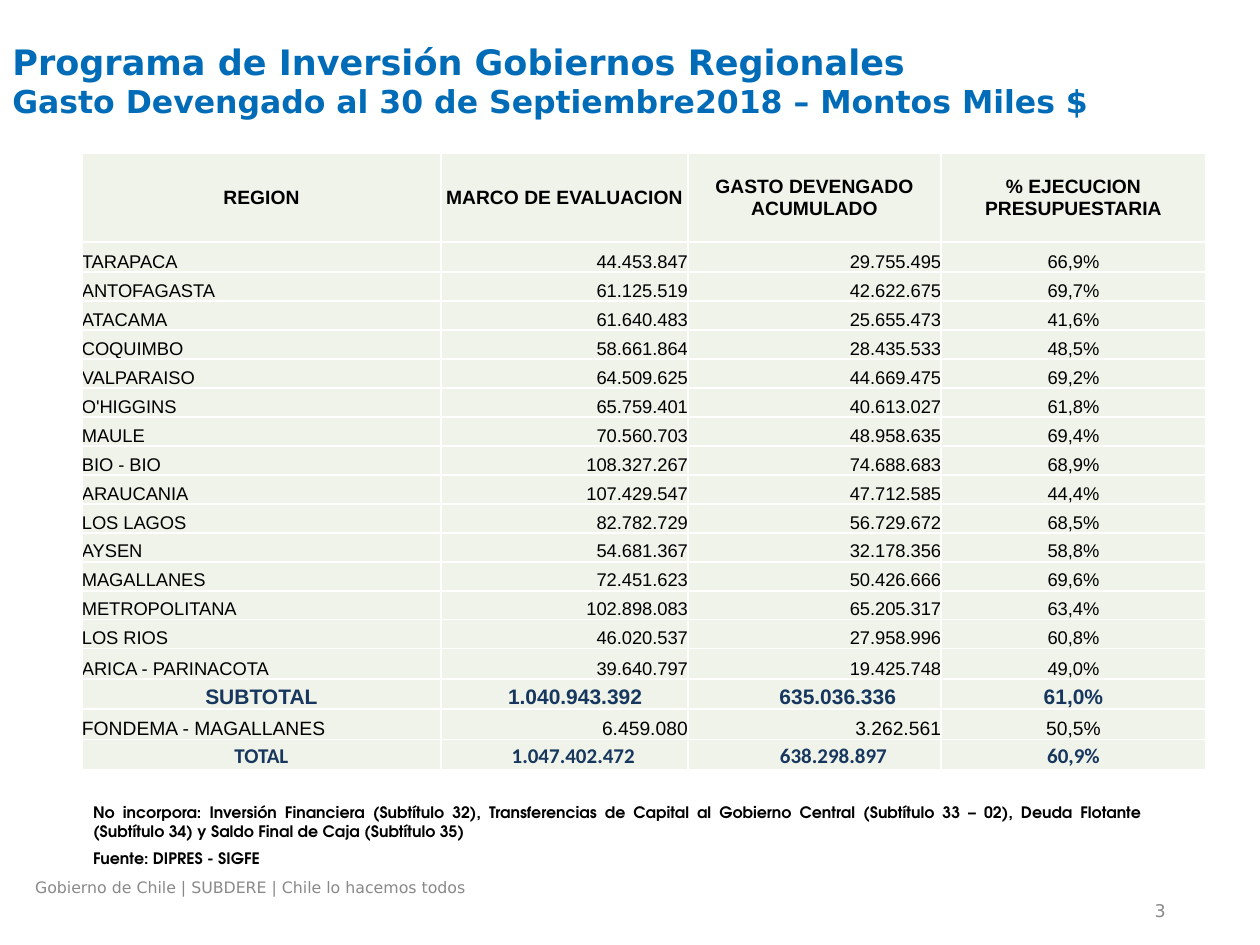
from dataclasses import dataclass

from lxml import etree
from pptx import Presentation
from pptx.dml.color import RGBColor
from pptx.enum.text import MSO_ANCHOR, PP_ALIGN
from pptx.oxml.ns import qn
from pptx.util import Emu, Inches, Pt

LEFT, CENTER, RIGHT, JUSTIFY = PP_ALIGN.LEFT, PP_ALIGN.CENTER, PP_ALIGN.RIGHT, PP_ALIGN.JUSTIFY
TOP, MIDDLE, BOTTOM = MSO_ANCHOR.TOP, MSO_ANCHOR.MIDDLE, MSO_ANCHOR.BOTTOM
SLIDE_WIDTH, SLIDE_HEIGHT = Inches(10), Inches(7.5)


@dataclass(frozen=True)
class TextStyle:
    size: float
    font: str
    color: str
    bold: bool = False


@dataclass(frozen=True)
class Theme:
    cell_fill: str = "EFF3EA"
    border: str = "FFFFFF"
    border_width: float = 1
    title: TextStyle = TextStyle(20, "DejaVu Sans", "006CB7", True)
    subtitle: TextStyle = TextStyle(18, "DejaVu Sans", "006CB7", True)
    footer: TextStyle = TextStyle(9, "DejaVu Sans", "898989")
    page_number: TextStyle = TextStyle(10, "DejaVu Sans", "898989")
    note: TextStyle = TextStyle(9, "TeX Gyre Adventor", "000000", True)
    header: TextStyle = TextStyle(11, "Arial", "000000", True)
    region: TextStyle = TextStyle(10.5, "Arial", "000000")
    fund: TextStyle = TextStyle(11, "Arial", "000000")
    subtotal: TextStyle = TextStyle(12, "Arial", "17375E", True)
    total: TextStyle = TextStyle(12, "Calibri", "17375E", True)


THEME = Theme()


@dataclass(frozen=True)
class Box:
    """A rectangle in percent of the slide's width and height."""
    left: float
    top: float
    width: float
    height: float


@dataclass(frozen=True)
class TextBlock:
    """Text whose styles apply to its runs in order, the last one repeating."""
    box: Box
    text: str
    styles: tuple[TextStyle, ...]
    alignments: tuple[PP_ALIGN, ...] = (LEFT,)
    anchor: MSO_ANCHOR = TOP
    paragraph_gap: float = 0


@dataclass(frozen=True)
class RowKind:
    """Looks of a table row; indents are left margins in percent of slide width."""
    style: TextStyle
    height: float
    alignments: tuple[PP_ALIGN, ...]
    anchor: MSO_ANCHOR = BOTTOM
    indents: tuple[float, ...] = (0, 0, 0, 0)


DATA_ALIGNMENTS = (LEFT, RIGHT, RIGHT, CENTER)
CENTERED = (CENTER,) * 4
HEADER = RowKind(THEME.header, 9.33, CENTERED, MIDDLE)
REGION = RowKind(THEME.region, 3.07, DATA_ALIGNMENTS)
EDGE_REGION = RowKind(THEME.region, 3.2, DATA_ALIGNMENTS)
SUBTOTAL = RowKind(THEME.subtotal, 3.2, CENTERED, indents=(0, 1.7, 3.7, 0))
FUND = RowKind(THEME.fund, 3.2, DATA_ALIGNMENTS)
TOTAL = RowKind(THEME.total, 3.2, CENTERED, indents=(0, 1.4, 3, 0))

REGIONS = [
    ("TARAPACA", "44.453.847", "29.755.495", "66,9%"),
    ("ANTOFAGASTA", "61.125.519", "42.622.675", "69,7%"),
    ("ATACAMA", "61.640.483", "25.655.473", "41,6%"),
    ("COQUIMBO", "58.661.864", "28.435.533", "48,5%"),
    ("VALPARAISO", "64.509.625", "44.669.475", "69,2%"),
    ("O'HIGGINS", "65.759.401", "40.613.027", "61,8%"),
    ("MAULE", "70.560.703", "48.958.635", "69,4%"),
    ("BIO - BIO", "108.327.267", "74.688.683", "68,9%"),
    ("ARAUCANIA", "107.429.547", "47.712.585", "44,4%"),
    ("LOS LAGOS", "82.782.729", "56.729.672", "68,5%"),
    ("AYSEN", "54.681.367", "32.178.356", "58,8%"),
    ("MAGALLANES", "72.451.623", "50.426.666", "69,6%"),
    ("METROPOLITANA", "102.898.083", "65.205.317", "63,4%"),
    ("LOS RIOS", "46.020.537", "27.958.996", "60,8%"),
    ("ARICA - PARINACOTA", "39.640.797", "19.425.748", "49,0%"),
]
ROWS = [
    (HEADER, ("REGION", "MARCO DE EVALUACION", "GASTO DEVENGADO ACUMULADO",
              "% EJECUCION PRESUPUESTARIA")),
    (EDGE_REGION, REGIONS[0]),
    *((REGION, values) for values in REGIONS[1:-1]),
    (EDGE_REGION, REGIONS[-1]),
    (SUBTOTAL, ("SUBTOTAL", "1.040.943.392", "635.036.336", "61,0%")),
    (FUND, ("FONDEMA - MAGALLANES", "6.459.080", "3.262.561", "50,5%")),
    (TOTAL, ("TOTAL", "1.047.402.472", "638.298.897", "60,9%")),
]
COLUMN_WIDTHS = (28.5, 19.6, 20.1, 21)
TABLE_BOX = Box(6.5, 16.27, sum(COLUMN_WIDTHS), sum(kind.height for kind, _ in ROWS))

TEXT_BLOCKS = [
    TextBlock(Box(70.2, 94.93, 23.3, 2.8), "3", (THEME.page_number,), (RIGHT,), MIDDLE),
    TextBlock(Box(0, 3.6, 89.7, 12.4),
              "Programa de Inversión Gobiernos Regionales\v"
              "Gasto Devengado al 30 de Septiembre2018 – Montos Miles $",
              (THEME.title, THEME.subtitle)),
    TextBlock(Box(1.8, 92.27, 64.8, 3.6),
              "Gobierno de Chile | SUBDERE | Chile lo hacemos todos", (THEME.footer,)),
    TextBlock(Box(6.4, 84.27, 85.1, 8.4),
              "No incorpora: Inversión Financiera (Subtítulo 32), Transferencias de Capital "
              "al Gobierno Central (Subtítulo 33 – 02), Deuda Flotante (Subtítulo 34) y "
              "Saldo Final de Caja (Subtítulo 35)\nFuente: DIPRES - SIGFE",
              (THEME.note,), (JUSTIFY, LEFT), paragraph_gap=4.5),
]


def across(percent: float) -> Emu:
    return Emu(round(SLIDE_WIDTH * percent / 100))


def down(percent: float) -> Emu:
    return Emu(round(SLIDE_HEIGHT * percent / 100))


def frame(box: Box) -> tuple[Emu, Emu, Emu, Emu]:
    return across(box.left), down(box.top), across(box.width), down(box.height)


def format_run(run, style: TextStyle) -> None:
    run.font.size = Pt(style.size)
    run.font.name = style.font
    run.font.bold = style.bold
    run.font.color.rgb = RGBColor.from_string(style.color)


def draw_text(slide, block: TextBlock) -> None:
    text_frame = slide.shapes.add_textbox(*frame(block.box)).text_frame
    text_frame.word_wrap = True
    text_frame.vertical_anchor = block.anchor
    text_frame.text = block.text
    for index, paragraph in enumerate(text_frame.paragraphs):
        paragraph.alignment = block.alignments[min(index, len(block.alignments) - 1)]
        if index:
            paragraph.space_before = Pt(block.paragraph_gap)
        for position, run in enumerate(paragraph.runs):
            format_run(run, block.styles[min(position, len(block.styles) - 1)])


def add_borders(cell) -> None:
    properties = cell._tc.get_or_add_tcPr()
    for side in ("lnL", "lnR", "lnT", "lnB"):
        line = etree.SubElement(properties, qn(f"a:{side}"), w=str(Pt(THEME.border_width)))
        fill = etree.SubElement(line, qn("a:solidFill"))
        etree.SubElement(fill, qn("a:srgbClr"), val=THEME.border)


def fill_cell(cell, text: str, kind: RowKind, column: int) -> None:
    add_borders(cell)
    cell.fill.solid()
    cell.fill.fore_color.rgb = RGBColor.from_string(THEME.cell_fill)
    cell.margin_left = across(kind.indents[column])
    cell.margin_right = cell.margin_top = cell.margin_bottom = 0
    cell.vertical_anchor = kind.anchor
    cell.text_frame.text = text
    paragraph = cell.text_frame.paragraphs[0]
    paragraph.alignment = kind.alignments[column]
    format_run(paragraph.runs[0], kind.style)


def draw_budget_table(slide) -> None:
    table = slide.shapes.add_table(len(ROWS), len(COLUMN_WIDTHS), *frame(TABLE_BOX)).table
    for column, width in zip(table.columns, COLUMN_WIDTHS):
        column.width = across(width)
    for row, (kind, values) in zip(table.rows, ROWS):
        row.height = down(kind.height)
        for column, (cell, text) in enumerate(zip(row.cells, values)):
            fill_cell(cell, text, kind, column)


def main() -> None:
    presentation = Presentation()
    presentation.slide_width, presentation.slide_height = SLIDE_WIDTH, SLIDE_HEIGHT
    slide = presentation.slides.add_slide(presentation.slide_layouts[6])
    for block in TEXT_BLOCKS:
        draw_text(slide, block)
    draw_budget_table(slide)
    presentation.save("out.pptx")


if __name__ == "__main__":
    main()
